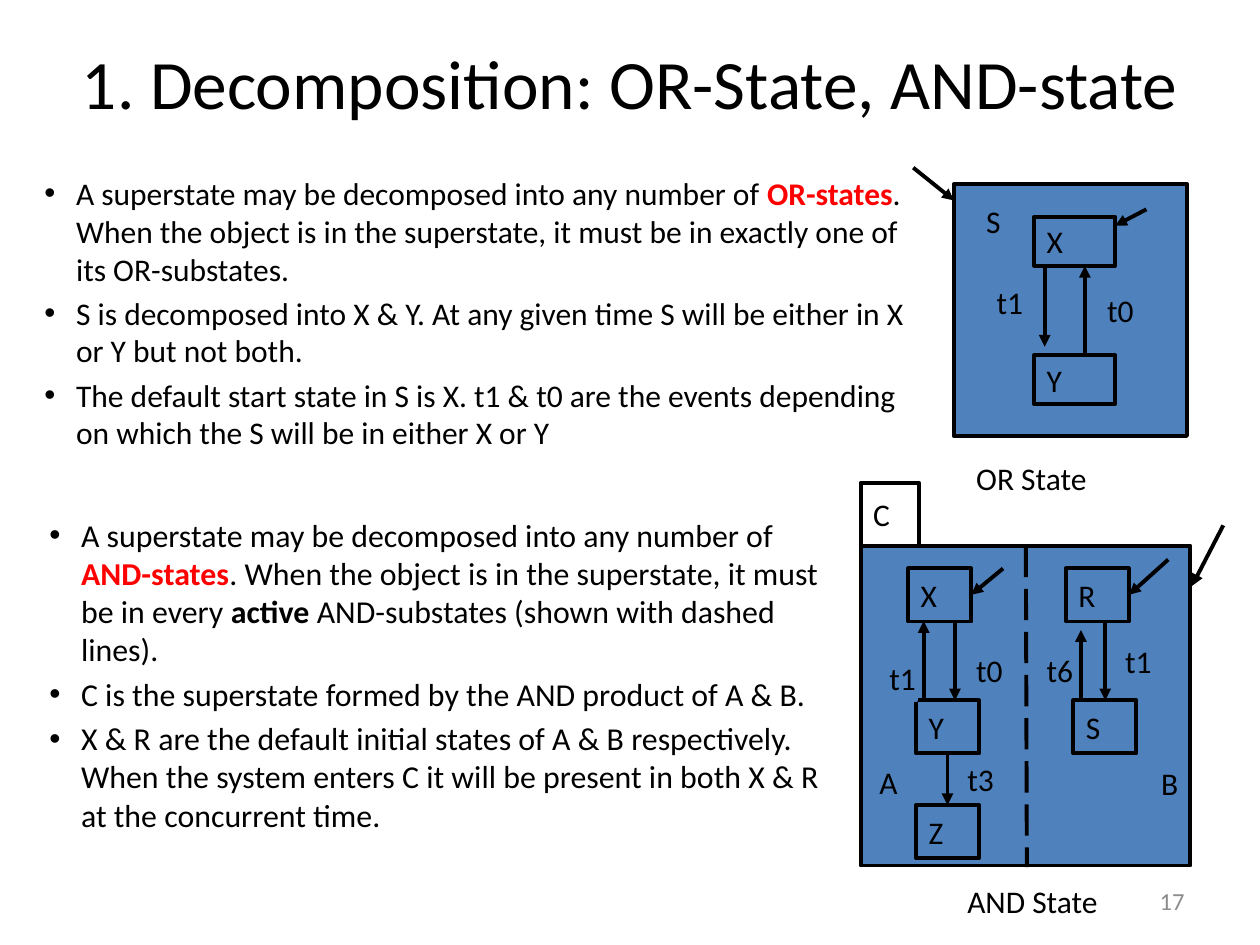
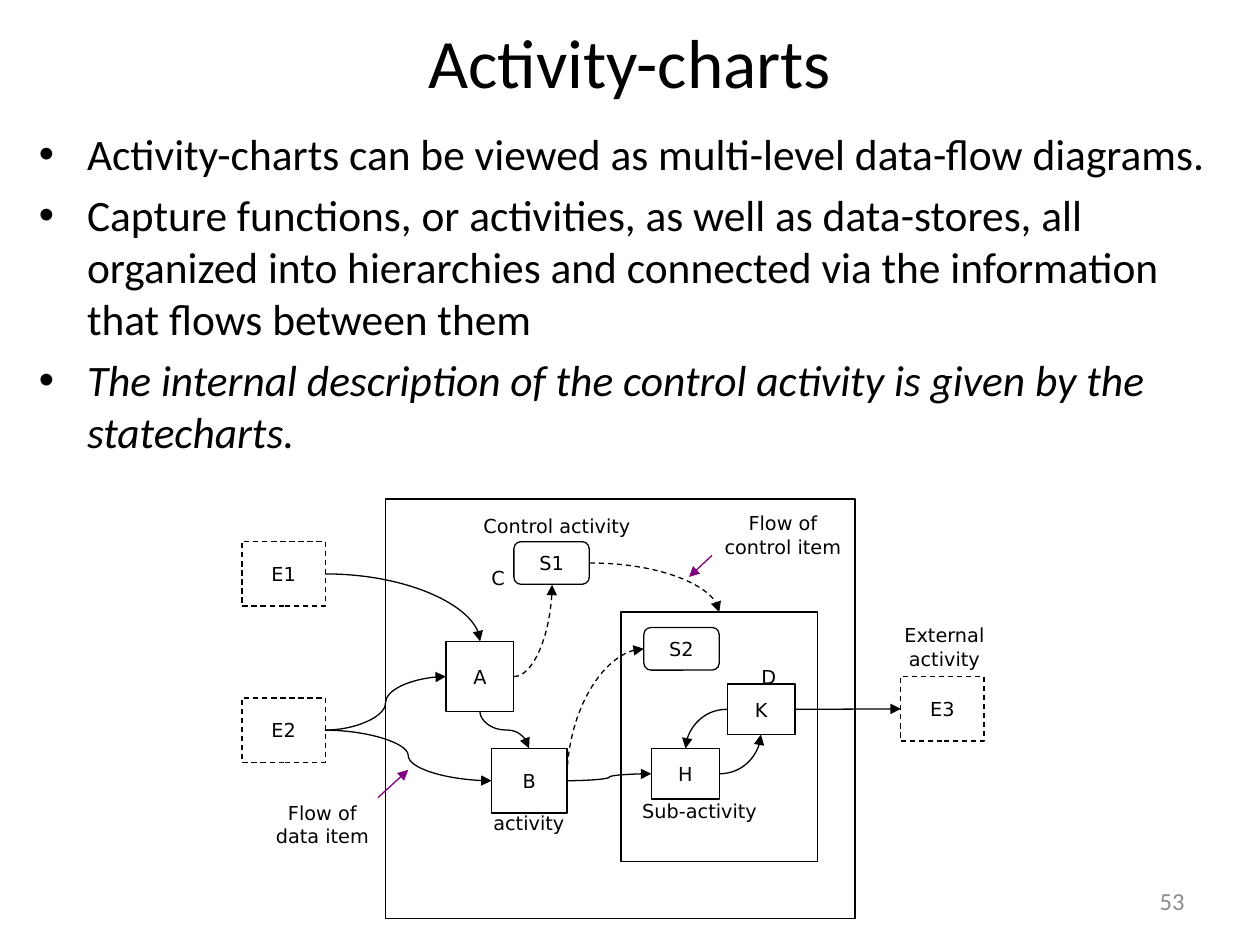
from pptx import Presentation
from pptx.dml.color import RGBColor
from pptx.enum.dml import MSO_LINE
from pptx.enum.shapes import MSO_CONNECTOR, MSO_SHAPE
from pptx.enum.text import MSO_ANCHOR, MSO_AUTO_SIZE, PP_ALIGN
from pptx.oxml.ns import qn
from pptx.util import Cm, Pt

RECTANGLE = MSO_SHAPE.RECTANGLE
ROUNDED = MSO_SHAPE.FLOWCHART_ALTERNATE_PROCESS
STRAIGHT, CURVE = MSO_CONNECTOR.STRAIGHT, MSO_CONNECTOR.CURVE
DASH, LONG_DASH = MSO_LINE.DASH, MSO_LINE.LONG_DASH
LEFT, CENTER, RIGHT = PP_ALIGN.LEFT, PP_ALIGN.CENTER, PP_ALIGN.RIGHT
TOP, MIDDLE = MSO_ANCHOR.TOP, MSO_ANCHOR.MIDDLE
NO_AUTO_SIZE = MSO_AUTO_SIZE.NONE

BLACK, WHITE, BLUE = "000000", "FFFFFF", "4F81BD"
RED, PURPLE, GREY = "FF0000", "800080", "8C8C8C"
TEXT_FONT, DIAGRAM_FONT = "Calibri", "DejaVu Sans"
CONTENT_LAYOUT, TWO_CONTENT_LAYOUT = 1, 3
QUARTER_TURN_BACK = 270 * 60000

PLAIN, BOLD, ITALIC = {}, {"bold": True}, {"italic": True}
RED_BOLD = {"bold": True, "color": RED}


def color(hex_string):
    return RGBColor.from_string(hex_string)


def inches(value):
    return Cm(round(value * 2.54, 2))


def edge(box, side):
    """Middle of one side of a (left, top, width, height) box."""
    left, top, width, height = box
    return {
        "left": (left, top + height / 2),
        "right": (left + width, top + height / 2),
        "top": (left + width / 2, top),
        "bottom": (left + width / 2, top + height),
    }[side]


class Deck:
    """Presentation style plus the slide being drawn."""

    def __init__(self):
        self.presentation = Presentation()
        self.presentation.slide_width = inches(10)
        self.presentation.slide_height = inches(7.5)
        self.slide = None
        self.use_style(TEXT_FONT, 18, 2.25, LEFT)

    def use_style(self, font, size, line_width, align):
        """Set the look of the diagram elements that follow."""
        self.font, self.size = font, size
        self.line_width, self.align = line_width, align

    def start_slide(self, layout, title, title_box, number):
        layouts = self.presentation.slide_layouts
        self.slide = self.presentation.slides.add_slide(layouts[layout])
        shape = self.slide.shapes.title
        self.place(shape, title_box)
        self.fill_text(shape, title, TEXT_FONT, 39.6, CENTER, MIDDLE, wrap=True)
        number_shape = self.slide.shapes.add_textbox(
            *map(inches, (7.17, 6.95, 2.33, 0.4)))
        self.fill_text(number_shape, number, TEXT_FONT, 14, RIGHT, MIDDLE,
                       GREY, wrap=True)

    def place(self, shape, box):
        shape.left, shape.top, shape.width, shape.height = map(inches, box)

    def format_run(self, run, font, size, text_color=BLACK):
        run.font.name, run.font.size = font, Pt(size)
        run.font.color.rgb = color(text_color)

    def fill_text(self, shape, text, font, size, align, anchor,
                  text_color=BLACK, wrap=False):
        frame = shape.text_frame
        frame.text = text
        frame.word_wrap = wrap
        frame.auto_size = NO_AUTO_SIZE
        frame.vertical_anchor = anchor
        for paragraph in frame.paragraphs:
            paragraph.alignment = align
            for run in paragraph.runs:
                self.format_run(run, font, size, text_color)

    def bullets(self, index, box, items, size, indent):
        """Fill a body placeholder; each item is a list of (text, look) runs."""
        shape = self.slide.placeholders[index]
        self.place(shape, box)
        frame = shape.text_frame
        frame.auto_size = NO_AUTO_SIZE
        for position, item in enumerate(items):
            paragraph = frame.add_paragraph() if position else frame.paragraphs[0]
            properties = paragraph._p.get_or_add_pPr()
            properties.set("marL", str(inches(indent)))
            properties.set("indent", str(-inches(indent)))
            for text, look in item:
                run = paragraph.add_run()
                run.text = text
                self.format_run(run, TEXT_FONT, size, look.get("color", BLACK))
                run.font.bold = look.get("bold")
                run.font.italic = look.get("italic")

    def box(self, box, text="", fill=None, line=BLACK, kind=RECTANGLE, dash=None):
        shape = self.slide.shapes.add_shape(kind, *map(inches, box))
        shape.shadow.inherit = False
        if fill:
            shape.fill.solid()
            shape.fill.fore_color.rgb = color(fill)
        else:
            shape.fill.background()
        shape.line.color.rgb = color(line)
        shape.line.width = Pt(self.line_width)
        if dash:
            shape.line.dash_style = dash
        if text:
            self.fill_text(shape, text, self.font, self.size, self.align, MIDDLE)

    def tag(self, box, text, fill=BLUE):
        """Label whose outline has the colour of its fill."""
        self.box(box, text, fill, fill)

    def label(self, box, text):
        shape = self.slide.shapes.add_textbox(*map(inches, box))
        self.fill_text(shape, text, self.font, self.size, CENTER, TOP)

    def connector(self, start, end, kind=STRAIGHT, line=BLACK, dash=None,
                  arrow="tailEnd"):
        shape = self.slide.shapes.add_connector(
            kind, *map(inches, (*start, *end)))
        shape.line.color.rgb = color(line)
        shape.line.width = Pt(self.line_width)
        if dash:
            shape.line.dash_style = dash
        properties = shape.element.spPr
        if arrow:
            outline = properties.find(qn("a:ln"))
            head = outline.makeelement(qn("a:" + arrow), {"type": "triangle"})
            outline.append(head)
        properties.append(properties.makeelement(qn("a:effectLst"), {}))
        return shape

    def bend(self, start, end, **options):
        """Quarter curve that starts level and ends upright."""
        shape = self.connector(start, end, CURVE, **options)
        geometry = shape.element.spPr.find(qn("a:prstGeom"))
        geometry.set("prst", "curvedConnector2")

    def upright_wave(self, start, end):
        """S-curve that starts and ends upright."""
        middle_x, middle_y = (start[0] + end[0]) / 2, (start[1] + end[1]) / 2
        half_x, half_y = (end[0] - start[0]) / 2, (end[1] - start[1]) / 2
        shape = self.connector((middle_x + half_y, middle_y - half_x),
                               (middle_x - half_y, middle_y + half_x), CURVE)
        transform = shape.element.spPr.find(qn("a:xfrm"))
        transform.set("rot", str(QUARTER_TURN_BACK))


def draw_or_state(deck):
    deck.box((7.57, 1.46, 1.85, 2), fill=BLUE)
    for name, top in (("X", 1.72), ("Y", 2.82)):
        deck.box((8.21, top, 0.64, 0.39), name, BLUE)
    deck.tag((7.81, 2.24, 0.4, 0.32), "t1")
    deck.tag((8.69, 2.3, 0.4, 0.32), "t0")
    deck.tag((7.73, 1.59, 0.32, 0.32), "S")
    deck.tag((7.65, 3.66, 1.6, 0.26), "OR State", WHITE)
    for start, end in (
        ((8.29, 2.11), (8.29, 2.75)),
        ((8.61, 2.82), (8.61, 2.11)),
        ((9.1, 1.66), (8.85, 1.79)),
        ((7.25, 1.33), (7.57, 1.59)),
    ):
        deck.connector(start, end)


def draw_and_state(deck):
    deck.box((6.83, 4.33, 2.62, 2.54), fill=BLUE)
    for name, left, top in (("Z", 7.27, 6.39), ("S", 8.52, 5.56), ("R", 8.46, 4.51),
                            ("Y", 7.27, 5.56), ("X", 7.21, 4.51)):
        deck.box((left, top, 0.5, 0.42), name, BLUE)
    deck.connector((8.14, 4.33), (8.15, 6.88), dash=LONG_DASH, arrow=None)
    for event, left, top in (("t6", 8.21, 5.14), ("t0", 7.65, 5.14),
                             ("t1", 8.83, 5.07), ("t1", 6.96, 5.21)):
        deck.tag((left, top, 0.31, 0.35), event)
    deck.tag((7.58, 6.04, 0.38, 0.28), "t3")
    deck.tag((6.88, 6.03, 0.25, 0.35), "A")
    deck.tag((9.12, 5.96, 0.25, 0.5), "B")
    deck.tag((7.58, 7.01, 1.25, 0.28), "AND State", WHITE)
    for start, end in (
        ((8.77, 4.93), (8.77, 5.56)),
        ((8.58, 5.56), (8.58, 5)),
        ((7.58, 4.93), (7.58, 5.56)),
        ((7.33, 5.56), (7.33, 4.93)),
        ((7.52, 5.97), (7.52, 6.39)),
        ((9.27, 4.44), (8.96, 4.72)),
        ((7.96, 4.51), (7.71, 4.72)),
        ((9.71, 4.17), (9.46, 4.65)),
    ):
        deck.connector(start, end)
    deck.box((6.83, 3.83, 0.46, 0.5), "C", WHITE)


def add_decomposition_slide(deck):
    deck.start_slide(TWO_CONTENT_LAYOUT, "1. Decomposition: OR-State, AND-state",
                     (0.5, 0.3, 9, 0.7), "17")
    deck.bullets(1, (0.25, 1.33, 7.12, 2.46), [
        [("A superstate may be decomposed into any number of ", PLAIN),
         ("OR-states", RED_BOLD),
         (". When the object is in the superstate, it must be in exactly one of "
          "its OR-substates.", PLAIN)],
        [("S is decomposed into X & Y. At any given time S will be either in X "
          "or Y but not both.", PLAIN)],
        [("The default start state in S is X. t1 & t0 are the events depending "
          "on which the S will be in either X or Y", PLAIN)],
    ], 18, 0.25)
    deck.bullets(2, (0.29, 4.04, 6.5, 2.79), [
        [("A superstate may be decomposed into any number of ", PLAIN),
         ("AND-states", RED_BOLD),
         (". When the object is in the superstate, it must be in every ", PLAIN),
         ("active ", BOLD),
         ("AND-substates (shown with dashed lines).", PLAIN)],
        [("C is the superstate formed by the AND product of A & B.", PLAIN)],
        [("X & R are the default initial states of A & B respectively. When the "
          "system enters C it will be present in both X & R at the concurrent "
          "time.", PLAIN)],
    ], 18.2, 0.25)
    deck.use_style(TEXT_FONT, 18, 2.25, LEFT)
    draw_or_state(deck)
    draw_and_state(deck)


def draw_activity_chart(deck):
    system, subsystem = (3.06, 3.96, 3.73, 3.33), (4.93, 4.86, 1.56, 1.98)
    activities = {"H": (5.17, 5.94, 0.54, 0.4), "K": (5.77, 5.43, 0.54, 0.4),
                  "A": (3.54, 5.09, 0.54, 0.56), "B": (3.9, 5.94, 0.6, 0.51)}
    controls = {"S1": (4.08, 4.3, 0.6, 0.34), "S2": (5.11, 4.98, 0.6, 0.34)}
    externals = {"E1": (1.92, 4.3, 0.66, 0.51), "E2": (1.92, 5.54, 0.66, 0.51),
                 "E3": (7.15, 5.37, 0.66, 0.51)}
    deck.box(system)
    deck.box(subsystem)
    for boxes, kind, dash in ((activities, RECTANGLE, None),
                              (controls, ROUNDED, None),
                              (externals, RECTANGLE, DASH)):
        for name, box in boxes.items():
            deck.box(box, name, kind=kind, dash=dash)

    nodes = {**activities, **controls, **externals, "D": subsystem}

    def ends(source, source_side, target, target_side):
        return edge(nodes[source], source_side), edge(nodes[target], target_side)

    deck.bend(*ends("E1", "right", "A", "top"))
    deck.bend(*ends("H", "right", "K", "bottom"))
    deck.bend(*ends("K", "left", "H", "top"))
    deck.bend(*ends("A", "right", "S1", "bottom"), dash=DASH)
    deck.bend(*ends("S1", "right", "D", "top"), dash=DASH)
    deck.bend(*ends("S2", "left", "B", "right"), dash=DASH, arrow="headEnd")
    for source, target in (("E2", "A"), ("E2", "B"), ("B", "H")):
        deck.connector(*ends(source, "right", target, "left"), CURVE)
    deck.upright_wave(*ends("A", "bottom", "B", "top"))
    deck.connector(*ends("K", "right", "E3", "left"))

    for text, box in (
        ("C", (3.75, 4.45, 0.4, 0.35)),
        ("D", (5.9, 5.23, 0.4, 0.35)),
        ("External\nactivity", (7.03, 4.9, 0.93, 0.57)),
        ("activity", (3.78, 6.39, 0.84, 0.35)),
        ("Sub-activity", (4.93, 6.29, 1.25, 0.35)),
        ("Control activity", (3.66, 4.03, 1.52, 0.35)),
        ("Flow of\ncontrol item", (5.59, 4.01, 1.25, 0.57)),
        ("Flow of\ndata item", (2.04, 6.31, 1.04, 0.57)),
    ):
        deck.label(box, text)
    deck.connector((3, 6.33), (3.24, 6.11), line=PURPLE)
    deck.connector((5.65, 4.41), (5.47, 4.58), line=PURPLE)


def add_activity_slide(deck):
    deck.start_slide(CONTENT_LAYOUT, "Activity-charts", (0.5, 0.3, 9, 0.37), "53")
    deck.bullets(1, (0.21, 0.96, 9.58, 2.79), [
        [("Activity-charts can be viewed as multi-level data-flow diagrams.",
          PLAIN)],
        [("Capture functions, or activities, as well as data-stores, all "
          "organized into hierarchies and connected via the information that "
          "flows between them", PLAIN)],
        [("The internal description of the control activity is given by the "
          "statecharts.", ITALIC)],
    ], 24.8, 0.38)
    deck.use_style(DIAGRAM_FONT, 11, 0.75, CENTER)
    draw_activity_chart(deck)


def main():
    deck = Deck()
    add_decomposition_slide(deck)
    add_activity_slide(deck)
    deck.presentation.save("out.pptx")


if __name__ == "__main__":
    main()
